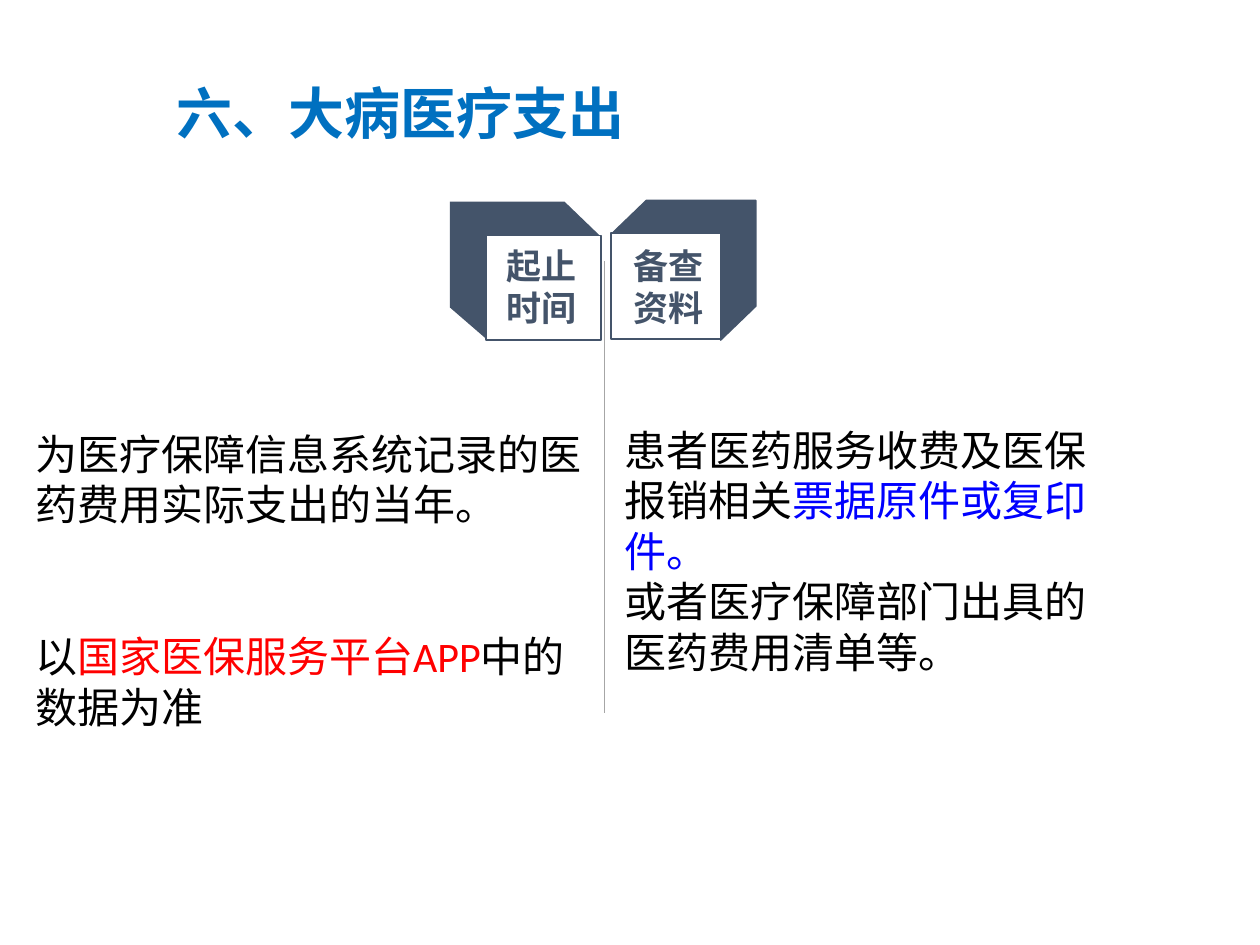
from dataclasses import dataclass
from typing import NamedTuple, Optional

from lxml.etree import SubElement
from pptx import Presentation
from pptx.dml.color import RGBColor
from pptx.enum.shapes import MSO_CONNECTOR, MSO_SHAPE
from pptx.enum.text import MSO_ANCHOR, PP_ALIGN
from pptx.oxml.ns import qn
from pptx.util import Inches, Pt

# Grid of 100 columns by 75 rows; positions are in cells
COLUMNS, ROWS = 100, 75
COLORS = {
    "title": "0070C0", "cube": "44546A", "face": "FFFFFF", "divider": "A6A6A6",
    "text": "000000", "source": "FF0000", "receipt": "0000FF",
}
CJK = "Noto Sans CJK SC"

prs = Presentation()
prs.slide_width, prs.slide_height = Inches(10), Inches(7.5)
slide = prs.slides.add_slide(prs.slide_layouts[6])
shapes = slide.shapes


class Box(NamedTuple):
    col: float
    row: float
    cols: float
    rows: float


class Span(NamedTuple):
    text: str
    color: str = "text"


@dataclass
class Paragraph:
    spans: list[Span]
    font: str = "Arial"
    size: int = 24
    bold: bool = False
    before: int = 0
    spacing: Optional[float] = None


@dataclass
class Cube:
    outer: float
    bevel: float
    inner: float
    top: float
    bottom: float
    notch: float
    face: Box
    edge: bool
    label: Box
    words: tuple[str, str]


def x(col: float) -> int:
    return round(prs.slide_width * col / COLUMNS)


def y(row: float) -> int:
    return round(prs.slide_height * row / ROWS)


def place(box: Box) -> tuple[int, int, int, int]:
    return x(box.col), y(box.row), x(box.cols), y(box.rows)


def rgb(name: str) -> RGBColor:
    return RGBColor.from_string(COLORS[name])


def paint(shape, fill: str, line_width: float) -> None:
    shape.shadow.inherit = False
    shape.fill.solid()
    shape.fill.fore_color.rgb = rgb(fill)
    if line_width:
        shape.line.color.rgb = rgb("cube")
        shape.line.width = Pt(line_width)
    else:
        shape.line.fill.background()


def write(frame, paragraphs: list[Paragraph], wrap: bool = True) -> None:
    frame.word_wrap = wrap
    for i, item in enumerate(paragraphs):
        para = frame.add_paragraph() if i else frame.paragraphs[0]
        para.alignment = PP_ALIGN.LEFT
        if item.before:
            para.space_before = Pt(item.before)
        if item.spacing:
            para.line_spacing = item.spacing
        para.font.name, para.font.size, para.font.bold = item.font, Pt(item.size), item.bold
        same_color = len({span.color for span in item.spans}) == 1
        if same_color:
            para.font.color.rgb = rgb(item.spans[0].color)
        # East Asian typeface sits beside the Latin one
        SubElement(para.font._element, qn("a:ea")).set("typeface", CJK)
        for span in item.spans:
            run = para.add_run()
            run.text = span.text
            if not same_color:
                run.font.color.rgb = rgb(span.color)


def add_text(box: Box, paragraphs: list[Paragraph], wrap: bool = True) -> None:
    write(shapes.add_textbox(*place(box)).text_frame, paragraphs, wrap)


def draw_cube(cube: Cube) -> None:
    corner = cube.face.col if cube.outer < cube.inner else cube.face.col + cube.face.cols
    face_top = cube.face.row
    outline = [
        (cube.outer, cube.top), (cube.outer, cube.notch), (corner, cube.bottom),
        (corner, face_top), (cube.inner, face_top), (cube.bevel, cube.top),
    ]
    points = [(x(col), y(row)) for col, row in outline]
    builder = shapes.build_freeform(*points[0], scale=1.0)
    builder.add_line_segments(points[1:], close=True)
    paint(builder.convert_to_shape(), "cube", 0.75 if cube.edge else 0)
    paint(shapes.add_shape(MSO_SHAPE.RECTANGLE, *place(cube.face)), "face", 1)


# Divider between the two columns
divider = shapes.add_connector(MSO_CONNECTOR.STRAIGHT, x(48), y(20.7), x(48), y(56.6))
divider.line.color.rgb = rgb("divider")
divider.line.width = Pt(0.5)
SubElement(divider._element.spPr, qn("a:effectLst"))

# Cubes with their labels
cubes = [
    Cube(35.7, 44.8, 47.6, 16, 26.9, 24.4, Box(38.6, 18.7, 9.1, 8.3), False,
         Box(39.2, 18.9, 7.6, 7.7), ("起止", "时间")),
    Cube(60, 51.3, 48.6, 15.9, 27, 24.3, Box(48.5, 18.5, 8.7, 8.4), True,
         Box(49.3, 18.9, 7.6, 7.7), ("备查", "资料")),
]
for cube in cubes:
    draw_cube(cube)
for cube in cubes:
    add_text(cube.label,
             [Paragraph([Span(word, "cube")], CJK, 20, True) for word in cube.words],
             wrap=False)

# Period and records columns
add_text(Box(1.8, 33.5, 45.8, 25.2), [
    Paragraph([Span("为医疗保障信息系统记录的医药费用实际支出的当年。")]),
    Paragraph([Span("以"), Span("国家医保服务平台APP", "source"), Span("中的数据为准")],
              font="Calibri", before=58),
])
add_text(Box(48.6, 33.2, 41.9, 21.2), [
    Paragraph([Span("患者医药服务收费及医保报销相关"), Span("票据原件或复印件。", "receipt")]),
    Paragraph([Span("或者医疗保障部门出具的医药费用清单等。")]),
])

# Title
title = shapes.add_shape(MSO_SHAPE.ROUNDED_RECTANGLE, *place(Box(13, 4.5, 78.4, 6.1)))
title.adjustments[0] = 0
title.shadow.inherit = False
title.fill.background()
title.line.fill.background()
title.text_frame.vertical_anchor = MSO_ANCHOR.MIDDLE
write(title.text_frame,
      [Paragraph([Span("六、大病医疗支出", "title")], CJK, 32, True, spacing=1.5)])

prs.save("out.pptx")
